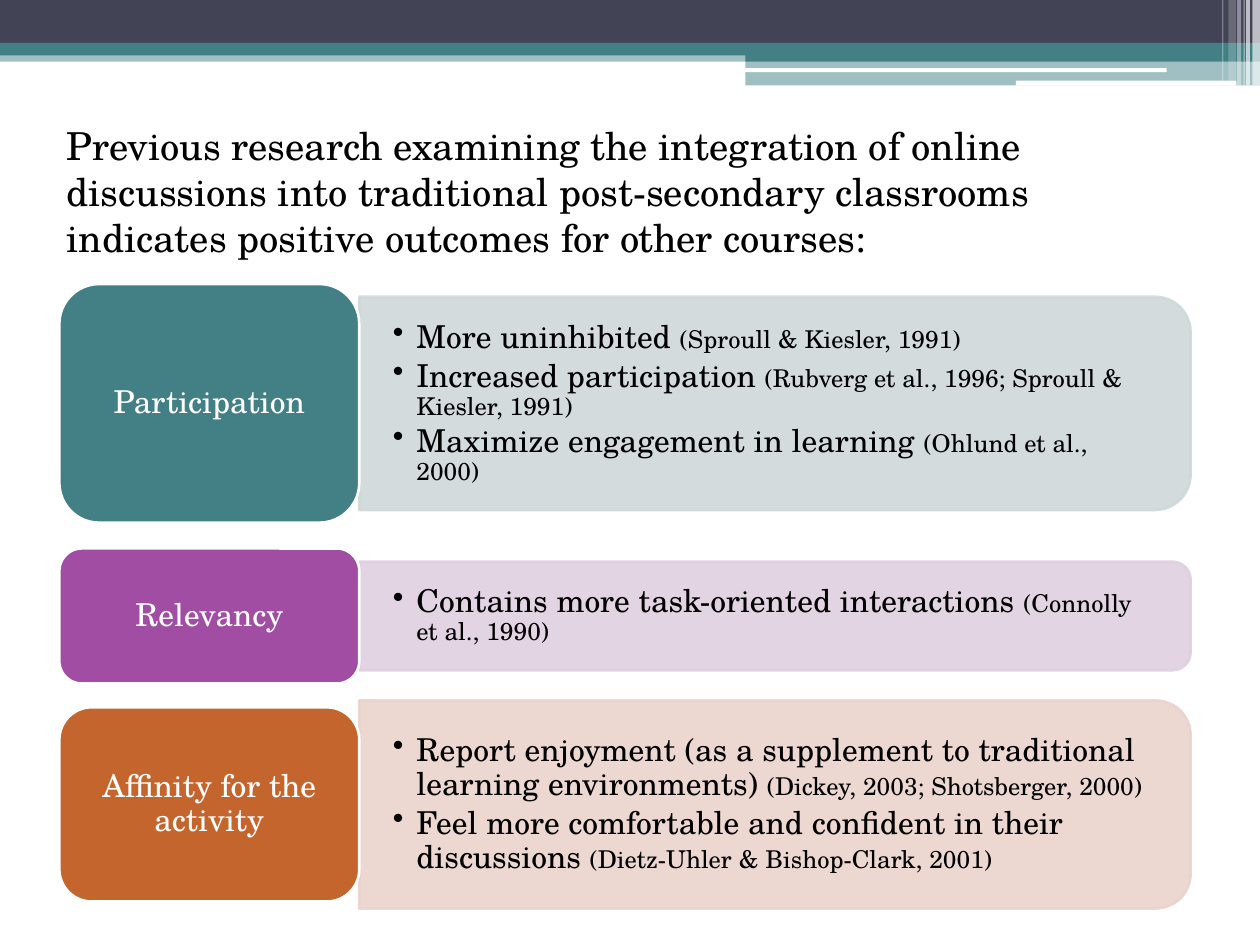
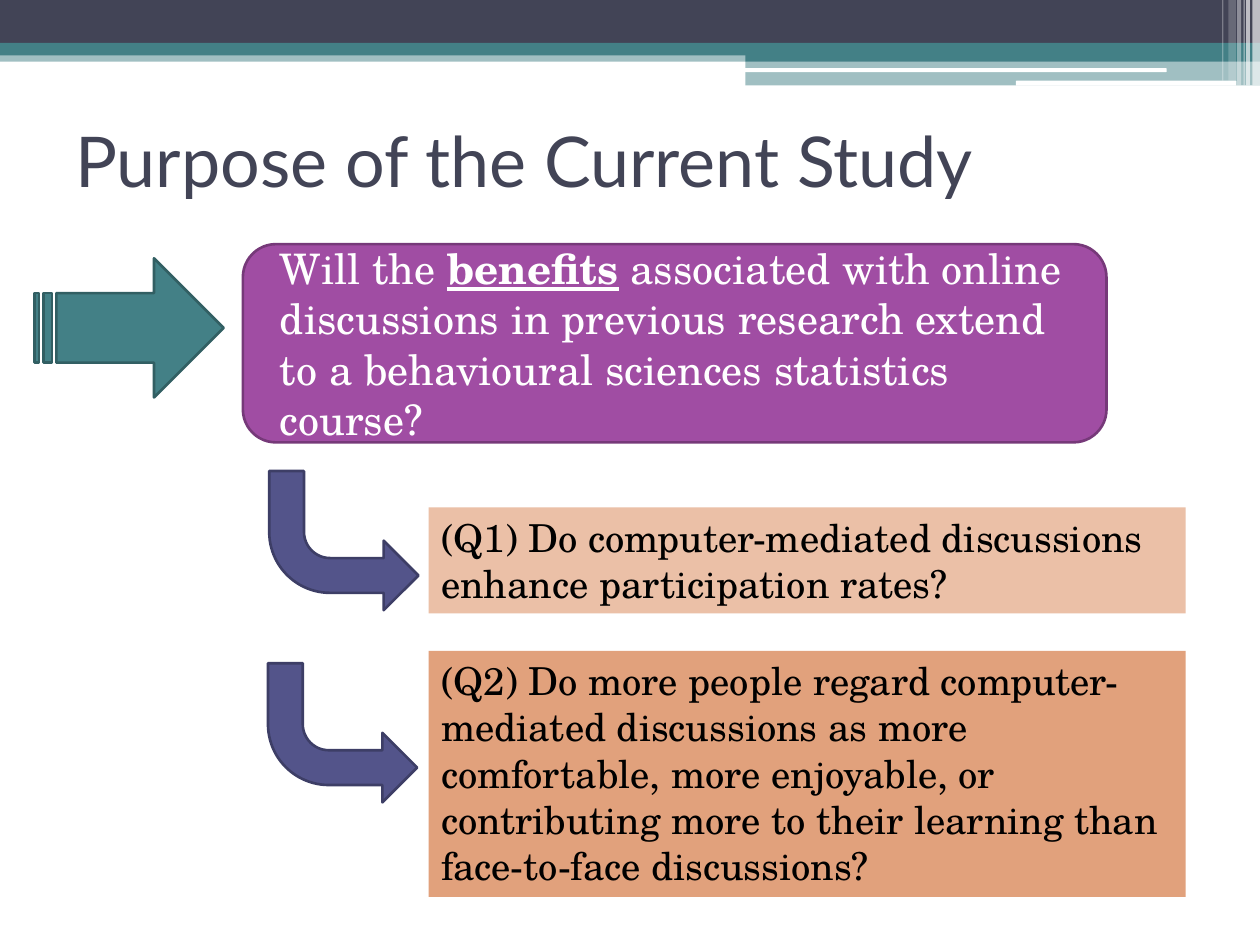
from math import cos, sin, pi

from lxml.etree import SubElement
from pptx import Presentation
from pptx.dml.color import RGBColor
from pptx.enum.shapes import MSO_SHAPE
from pptx.enum.text import MSO_ANCHOR, PP_ALIGN
from pptx.oxml.ns import qn
from pptx.util import Pt

COLORS = {
    "white": "FFFFFF", "black": "000000", "navy": "424456",
    "teal": "438086", "teal edge": "325F63", "teal tint": "CFD8D9",
    "purple": "A04DA3", "purple edge": "763979", "purple tint": "DFD0E0",
    "orange": "C4652D", "orange tint": "EAD3CD",
    "indigo": "53548A", "indigo edge": "3D3E66",
    "peach": "EBC0A7", "apricot": "E1A17C",
}
BODY_FONT = "TeX Gyre Schola"
TITLE_FONT = "Lato"


def paint(shape, fill, edge=None, opacity=100):
    """Give a shape its fill, optional 1.5 pt outline and opacity, without shadow."""
    shape.shadow.inherit = False
    shape.fill.solid()
    shape.fill.fore_color.rgb = RGBColor.from_string(COLORS[fill])
    if edge:
        shape.line.color.rgb = RGBColor.from_string(COLORS[edge])
        shape.line.width = Pt(1.5)
    else:
        shape.line.fill.background()
    if opacity < 100:
        for color in shape._element.spPr.iter(qn("a:srgbClr")):
            SubElement(color, qn("a:alpha"), val=str(opacity * 1000))


def write(paragraph, runs, color, font=BODY_FONT, align=PP_ALIGN.LEFT):
    """Add (text, size) runs to a paragraph and return them."""
    paragraph.alignment = align
    added = []
    for text, size in runs:
        run = paragraph.add_run()
        run.text = text
        run.font.size = Pt(size)
        run.font.name = font
        run.font.color.rgb = RGBColor.from_string(COLORS[color])
        added.append(run)
    return added


prs = Presentation()
prs.slide_width, prs.slide_height = Pt(720), Pt(540)
findings = prs.slides.add_slide(prs.slide_layouts[6])
purpose = prs.slides.add_slide(prs.slide_layouts[6])

# Header shared by both slides: left, top, width, height, colour, opacity
bands = [
    (0, 28.8, 720, 6.5, "teal", 50),
    (0, 0, 720, 24.5, "navy", 100),
    (0, 24.5, 720, 7.2, "teal", 100),
    (426, 28.1, 294, 7.2, "teal", 100),
    (426, 35.3, 294, 13.5, "teal", 50),
]
pills = [(425.5, 39, 241.2, 2.2), (580.5, 46.1, 126, 2.9)]
stripes = [  # left, width, height, opacity
    (715.7, 4.3, 48.8, 65), (712.1, 2.2, 48.8, 65), (710.6, 0.7, 48.8, 60),
    (707, 2.2, 48.8, 40), (702, 4.3, 46.1, 20), (698.4, 0.7, 46.1, 30),
]
for slide in (findings, purpose):
    for left, top, width, height, color, opacity in bands:
        band = slide.shapes.add_shape(
            MSO_SHAPE.RECTANGLE, Pt(left), Pt(top), Pt(width), Pt(height))
        paint(band, color, opacity=opacity)
    for left, top, width, height in pills:
        pill = slide.shapes.add_shape(
            MSO_SHAPE.ROUNDED_RECTANGLE, Pt(left), Pt(top), Pt(width), Pt(height))
        paint(pill, "white")
    for left, width, height, opacity in stripes:
        stripe = slide.shapes.add_shape(
            MSO_SHAPE.RECTANGLE, Pt(left), 0, Pt(width), Pt(height))
        paint(stripe, "white", opacity=opacity)

# Slide 1: introduction
intro = findings.shapes.add_textbox(Pt(31), Pt(66.2), Pt(652.3), Pt(87.1)).text_frame
intro.word_wrap = True
write(intro.paragraphs[0], [(
    "Previous research examining the integration of online discussions into "
    "traditional post-secondary classrooms indicates positive outcomes for "
    "other courses:", 22)], "black")

# Slide 1: outcomes, each a label and a card on one centre line
outcomes = [  # label, colour, centre, label height, card height, points
    ("Participation", "teal", 230.5, 136.4, 121.8, [
        ("More uninhibited ", "(Sproull & Kiesler, 1991)"),
        ("Increased participation ", "(Rubverg et al., 1996; Sproull & Kiesler, 1991)"),
        ("Maximize engagement in learning ", "(Ohlund et al., 2000)")]),
    ("Relevancy", "purple", 352, 77.2, 62, [
        ("Contains more task-oriented interactions ", "(Connolly et al., 1990)")]),
    ("Affinity for the activity", "orange", 459.7, 111, 118.8, [
        ("Report enjoyment (as a supplement to traditional learning environments) ",
         "(Dickey, 2003; Shotsberger, 2000)"),
        ("Feel more comfortable and confident in their discussions ",
         "(Dietz-Uhler & Bishop-Clark, 2001)")]),
]
label_left, card_left, card_right = 33.9, 205.3, 680.4
arc_steps = 12
for name, color, center, label_height, card_height, points in outcomes:
    # Card, rounded on the right only
    top, bottom = center - card_height / 2, center + card_height / 2
    radius = card_height / 6
    outline = []
    for corner_y, start in ((top + radius, -pi / 2), (bottom - radius, 0)):
        for step in range(arc_steps + 1):
            angle = start + step * pi / 2 / arc_steps
            outline.append((Pt(card_right - radius + radius * cos(angle)),
                            Pt(corner_y + radius * sin(angle))))
    outline.append((Pt(card_left), Pt(bottom)))
    builder = findings.shapes.build_freeform(Pt(card_left), Pt(top))
    builder.add_line_segments(outline, close=True)
    card = builder.convert_to_shape()
    paint(card, color + " tint", color + " tint", opacity=90)
    frame = card.text_frame
    frame.word_wrap = True
    frame.vertical_anchor = MSO_ANCHOR.MIDDLE
    frame.margin_left = Pt(19.2)
    frame.margin_right = Pt(19.2 + 0.29 * radius)
    frame.margin_top = frame.margin_bottom = Pt(9.6 + 0.29 * radius)
    for index, (claim, citation) in enumerate(points):
        point = frame.add_paragraph() if index else frame.paragraphs[0]
        write(point, [(claim, 18), (citation, 14)], "black")
        point.line_spacing = 0.9
        point.space_after = Pt(2.7)
        properties = point._p.get_or_add_pPr()
        properties.set("marL", str(Pt(13.5)))
        properties.set("indent", str(-Pt(13.5)))
        SubElement(properties, qn("a:buChar"), char="•")

    # Label
    label = findings.shapes.add_shape(
        MSO_SHAPE.ROUNDED_RECTANGLE, Pt(label_left), Pt(center - label_height / 2),
        Pt(card_left - label_left), Pt(label_height))
    paint(label, color, "white")
    frame = label.text_frame
    frame.word_wrap = True
    frame.vertical_anchor = MSO_ANCHOR.MIDDLE
    frame.margin_left = frame.margin_right = Pt(5.4)
    write(frame.paragraphs[0], [(name, 18)], "white", align=PP_ALIGN.CENTER)
    frame.paragraphs[0].line_spacing = 0.9

# Slide 2: title
title = purpose.shapes.add_textbox(Pt(36), Pt(49), Pt(648), Pt(84.2)).text_frame
title.word_wrap = True
title.vertical_anchor = MSO_ANCHOR.MIDDLE
write(title.paragraphs[0], [("Purpose of the Current Study", 40)], "navy", TITLE_FONT)

# Slide 2: main question and the arrow leading to it
main_question = purpose.shapes.add_shape(
    MSO_SHAPE.ROUNDED_RECTANGLE, Pt(138.8), Pt(139.5), Pt(493.5), Pt(113.3))
paint(main_question, "purple", "purple edge")
frame = main_question.text_frame
frame.word_wrap = True
frame.vertical_anchor = MSO_ANCHOR.MIDDLE
before, benefits, after = write(frame.paragraphs[0], [
    ("Will the ", 24), ("benefits", 24),
    (" associated with online discussions in previous research extend to a "
     "behavioural sciences statistics course?", 24)], "white")
benefits.font.bold = benefits.font.underline = True
frame.paragraphs[0]._p.get_or_add_pPr().set("marL", str(Pt(8.6)))

lead_arrow = purpose.shapes.add_shape(
    MSO_SHAPE.STRIPED_RIGHT_ARROW, Pt(19.8), Pt(147.6), Pt(108), Pt(79.5))
paint(lead_arrow, "teal", "teal edge")

# Slide 2: research questions, each with a bent arrow
questions = [  # text, fill, top, height, arrow left, arrow top
    ("(Q1) Do computer-mediated discussions enhance participation rates?",
     "peach", 290, 60.5, 153.8, 269.2),
    ("(Q2) Do more people regard computer-mediated discussions as more "
     "comfortable, more enjoyable, or contributing more to their learning than "
     "face-to-face discussions?", "apricot", 372, 140.5, 153.1, 379),
]
for text, fill, top, height, arrow_left, arrow_top in questions:
    question = purpose.shapes.add_shape(
        MSO_SHAPE.RECTANGLE, Pt(245), Pt(top), Pt(432.5), Pt(height))
    paint(question, fill)
    question.text_frame.word_wrap = True
    question.text_frame.vertical_anchor = MSO_ANCHOR.TOP
    write(question.text_frame.paragraphs[0], [(text, 22)], "black")

    bent_arrow = purpose.shapes.add_shape(
        MSO_SHAPE.BENT_ARROW, Pt(arrow_left), Pt(arrow_top), Pt(85.3), Pt(79.5))
    paint(bent_arrow, "indigo", "indigo edge")
    bent_arrow.rotation = 180
    bent_arrow._element.spPr.xfrm.set("flipH", "1")

prs.save("out.pptx")
